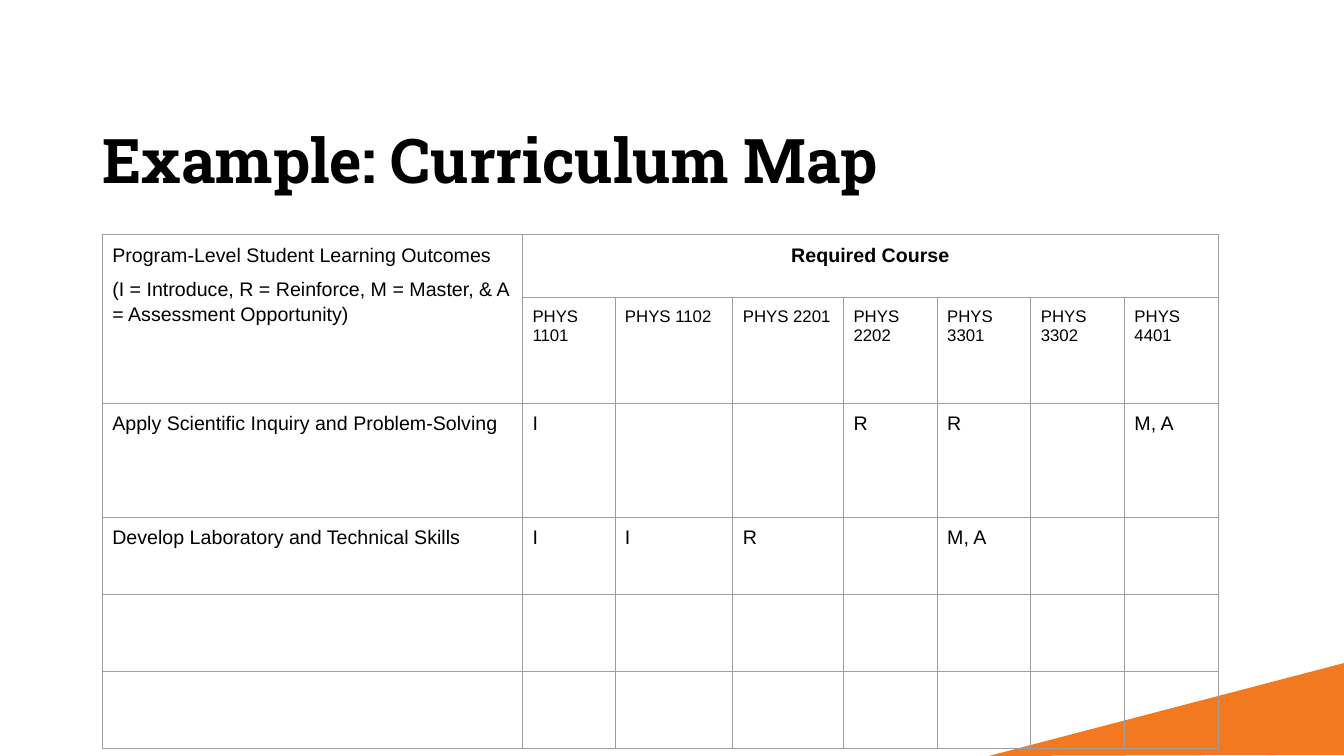
from lxml.etree import SubElement
from pptx import Presentation
from pptx.dml.color import RGBColor
from pptx.enum.text import MSO_ANCHOR as Anchor, PP_ALIGN as Align
from pptx.oxml.ns import qn
from pptx.util import Cm, Pt

COLORS = {"text": "000000", "accent": "F37920", "grid": "9E9E9E"}
TITLE = "Example: Curriculum Map"
OUTCOMES_HEADING = "Program-Level Student Learning Outcomes"
LEGEND = "(I = Introduce, R = Reinforce, M = Master, & A = Assessment Opportunity)"
COURSES_HEADING = "Required Course"
COURSES = ["PHYS 1101", "PHYS 1102", "PHYS 2201", "PHYS 2202",
           "PHYS 3301", "PHYS 3302", "PHYS 4401"]
OUTCOMES = [
    ("Apply Scientific Inquiry and Problem-Solving",
     {"PHYS 1101": "I", "PHYS 2202": "R", "PHYS 3301": "R", "PHYS 4401": "M, A"}),
    ("Develop Laboratory and Technical Skills",
     {"PHYS 1101": "I", "PHYS 1102": "I", "PHYS 2201": "R", "PHYS 3301": "M, A"}),
    ("", {}),
    ("", {}),
]
COLUMN_WIDTHS = [10.59, 2.33, 2.97, 2.79] + [2.36] * 4
ROW_HEIGHTS = [1.58, 2.55, 2.87] + [1.94] * 3
TABLE_LEFT, TABLE_TOP = 2.58, 5.91
CELL_MARGIN = Cm(0.25)
WEDGE = [(24.92, 19.05), (33.87, 16.71), (33.87, 19.02)]


def write(paragraph, text, size=14, font="Arial", bold=False, align=Align.LEFT,
          spacing=None, before=None, after=None):
    run = paragraph.add_run()
    run.text = text
    run.font.size, run.font.name, run.font.bold = Pt(size), font, bold
    run.font.color.rgb = RGBColor.from_string(COLORS["text"])
    paragraph.alignment = align
    paragraph.line_spacing = spacing
    paragraph.space_before, paragraph.space_after = before, after


def outline(cell):
    """Clear the cell's fill and draw its four borders."""
    cell.margin_left = cell.margin_right = CELL_MARGIN
    cell.margin_top = cell.margin_bottom = CELL_MARGIN
    properties = cell._tc.get_or_add_tcPr()
    for side in ("lnL", "lnR", "lnT", "lnB"):
        border = SubElement(properties, qn(f"a:{side}"), w=str(Pt(0.75)))
        fill = SubElement(border, qn("a:solidFill"))
        SubElement(fill, qn("a:srgbClr"), val=COLORS["grid"])
    cell.fill.background()


def add_wedge(slide):
    start, *others = [(Cm(x), Cm(y)) for x, y in WEDGE]
    builder = slide.shapes.build_freeform(*start)
    builder.add_line_segments(others, close=True)
    wedge = builder.convert_to_shape()
    wedge.shadow.inherit = False
    wedge.fill.solid()
    wedge.fill.fore_color.rgb = RGBColor.from_string(COLORS["accent"])
    wedge.line.fill.background()


def add_title(slide):
    frame = slide.shapes.add_textbox(Cm(2.33), Cm(3.18), Cm(29.21), Cm(1.9)).text_frame
    frame.word_wrap = True
    frame.vertical_anchor = Anchor.MIDDLE
    write(frame.paragraphs[0], TITLE, size=44, font="Roboto Slab", bold=True, spacing=0.9)


def add_curriculum_map(slide):
    grid = slide.shapes.add_table(
        len(ROW_HEIGHTS), len(COLUMN_WIDTHS), Cm(TABLE_LEFT), Cm(TABLE_TOP),
        Cm(sum(COLUMN_WIDTHS)), Cm(sum(ROW_HEIGHTS))).table
    grid.first_row = grid.horz_banding = False
    for column, width in zip(grid.columns, COLUMN_WIDTHS):
        column.width = Cm(width)
    for row, height in zip(grid.rows, ROW_HEIGHTS):
        row.height = Cm(height)
    for cell in grid.iter_cells():
        outline(cell)

    grid.cell(0, 0).merge(grid.cell(1, 0))
    grid.cell(0, 1).merge(grid.cell(0, len(COURSES)))
    heading = grid.cell(0, 0).text_frame
    write(heading.paragraphs[0], OUTCOMES_HEADING)
    write(heading.add_paragraph(), LEGEND, spacing=1.15, before=Pt(6), after=Pt(6))
    write(grid.cell(0, 1).text_frame.paragraphs[0], COURSES_HEADING,
          bold=True, align=Align.CENTER)
    for c, course in enumerate(COURSES, 1):
        write(grid.cell(1, c).text_frame.paragraphs[0], course, size=12)
    for r, (outcome, levels) in enumerate(OUTCOMES, 2):
        for c, entry in enumerate([outcome] + [levels.get(name) for name in COURSES]):
            if entry:
                write(grid.cell(r, c).text_frame.paragraphs[0], entry)


def main():
    deck = Presentation()
    deck.slide_width, deck.slide_height = Cm(33.87), Cm(19.05)
    slide = deck.slides.add_slide(deck.slide_layouts[6])
    add_wedge(slide)
    add_title(slide)
    add_curriculum_map(slide)
    deck.save("out.pptx")


if __name__ == "__main__":
    main()
